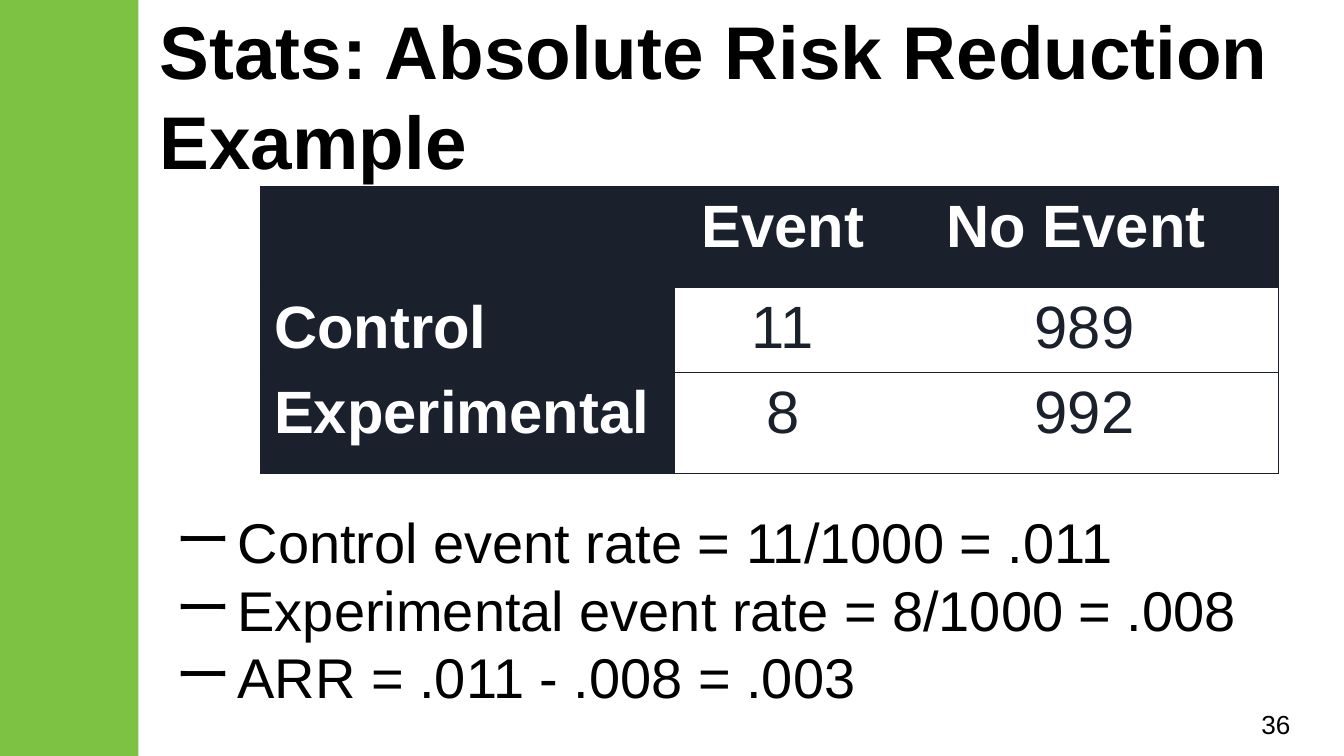
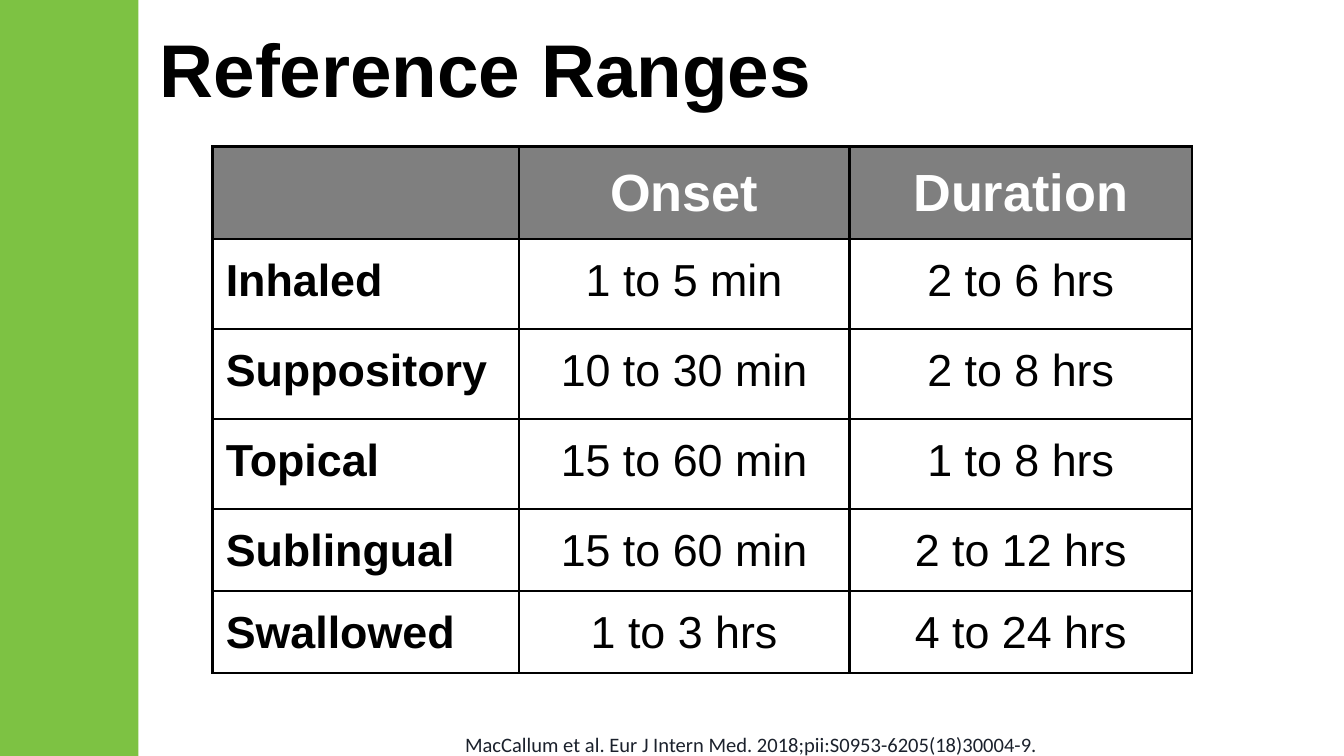
"""Build two slides with ruled tables beside a green side band."""
from dataclasses import dataclass
from typing import NamedTuple

from lxml import etree
from pptx import Presentation, util as u
from pptx.dml.color import RGBColor
from pptx.enum import shapes, text as t
from pptx.oxml import ns


@dataclass(frozen=True)
class Theme:
    """Colours, fonts and type sizes shared by the slides."""
    green: str = "7DC243"
    black: str = "000000"
    white: str = "FFFFFF"
    navy: str = "1B212C"
    rule: str = "1A202B"
    gray: str = "7F7F7F"
    font: str = "Arial"
    cite: str = "Calibri"
    title: int = 40
    body: int = 30
    page: int = 14
    note: int = 11
    loose: float = 1.15


class Box(NamedTuple):
    """A place in grid columns and rows."""
    col: float
    row: float
    wide: float
    tall: float


class Style(NamedTuple):
    """The look of one table."""
    head: str
    side: str | None
    label: str
    ink: str
    rule: str
    width: float
    inner: bool
    top: int
    size: int
    pad: float
    lead: float | None


class Grid(NamedTuple):
    """A table with its place, measures and words."""
    box: Box
    cols: list[float]
    rows: list[float]
    words: list[list[str]]
    style: Style


LOOK = Theme()
COLS, ROWS = 100, 56.25
WIDE = u.Inches(10)
UNIT = WIDE / COLS
TALL = round(ROWS * UNIT)

RISK = Grid(
    Box(19.4, 13.9, 75.7, 21.3), [30.8, 16.1, 28.8], [7.5, 4.1, 7.5],
    [["", "Event", "No Event "],
     ["Control", "11", "989"],
     ["Experimental", "8", "992"]],
    Style(LOOK.navy, LOOK.navy, LOOK.white, LOOK.navy, LOOK.rule,
          0.75, False, 32, 32, 0.5, None))

RANGES = Grid(
    Box(15.8, 10.9, 72.9, 39.1), [22.8, 24.6, 25.5],
    [6.9] + [6.7] * 3 + [6.1] * 2,
    [["", "Onset", "Duration"],
     ["Inhaled", "1 to 5 min", "2 to 6 hrs"],
     ["Suppository", "10 to 30 min", "2 to 8 hrs"],
     ["Topical", "15 to 60 min", "1 to 8 hrs"],
     ["Sublingual", "15 to 60 min", "2 to 12 hrs"],
     ["Swallowed", "1 to 3 hrs", "4 to 24 hrs"]],
    Style(LOOK.gray, None, LOOK.black, LOOK.black, LOOK.black,
          1.5, True, 28, 24, 0.7, LOOK.loose))

RATES = ["Control event rate = 11/1000 = .011",
         "Experimental event rate = 8/1000 = .008",
         "ARR = .011 - .008 = .003"]


def span(cells: float) -> int:
    """Turn grid cells into a length."""
    return round(cells * UNIT)


def place(box: Box) -> list[int]:
    """Turn a box into lengths."""
    return [span(side) for side in box]


def add(root, tag: str, **attrs: str):
    """Append a drawing element with its attributes."""
    return etree.SubElement(root, ns.qn(tag), attrs)


def mark(par) -> None:
    """Give a paragraph a hanging dash."""
    props = par._p.get_or_add_pPr()
    props.set("marL", str(span(5)))
    props.set("indent", str(-span(4.6)))
    add(add(props, "a:buClr"), "a:srgbClr", val=LOOK.black)
    add(props, "a:buFont", typeface=LOOK.font)
    add(props, "a:buChar", char="ー")


def write(par, words: str, *, size: int, color: str = LOOK.black,
          bold: bool = False, font: str = LOOK.font, align=None,
          lead: float | None = None, dash: bool = False) -> None:
    """Write formatted text into a paragraph."""
    if dash:
        mark(par)
    par.alignment = align
    par.line_spacing = lead
    par.font.size = u.Pt(size)
    if words:
        par.text = words
    for run in par.runs:
        run.font.name = font
        run.font.size = u.Pt(size)
        run.font.bold = bold
        run.font.color.rgb = RGBColor.from_string(color)


def label(slide, box: Box, lines: list[str], *, pad: tuple[float, float],
          anchor=t.MSO_ANCHOR.TOP, **form) -> None:
    """Draw a text box with one paragraph a line."""
    frame = slide.shapes.add_textbox(*place(box)).text_frame
    frame.word_wrap = True
    frame.vertical_anchor = anchor
    frame.margin_left = frame.margin_right = span(pad[0])
    frame.margin_top = frame.margin_bottom = span(pad[1])
    for num, line in enumerate(lines):
        par = frame.add_paragraph() if num else frame.paragraphs[0]
        write(par, line, **form)


def edge(cell, side: str, style: Style, seen: bool) -> None:
    """Rule or clear one side of a cell."""
    line = add(cell._tc.get_or_add_tcPr(), f"a:ln{side}",
               w=str(u.Pt(style.width)))
    if seen:
        add(add(line, "a:solidFill"), "a:srgbClr", val=style.rule)
    else:
        add(line, "a:noFill")


def fill(cell, color: str | None) -> None:
    """Fill a cell or leave it clear."""
    if color:
        cell.fill.solid()
        cell.fill.fore_color.rgb = RGBColor.from_string(color)
    else:
        cell.fill.background()


def chart(slide, grid: Grid) -> None:
    """Draw a ruled table."""
    style, last = grid.style, len(grid.cols) - 1
    frame = slide.shapes.add_table(
        len(grid.rows), len(grid.cols), *place(grid.box))
    table = frame.table
    table.horz_banding = table.first_row = False
    for col, wide in zip(table.columns, grid.cols):
        col.width = span(wide)
    for row, tall in zip(table.rows, grid.rows):
        row.height = span(tall)
    frame.height = span(grid.box.tall)
    for y, line in enumerate(grid.words):
        for x, words in enumerate(line):
            cell = table.cell(y, x)
            head, side = y == 0, x == 0
            cell.margin_left = cell.margin_right = span(1)
            cell.margin_top = cell.margin_bottom = span(style.pad)
            edge(cell, "L", style, style.inner or side)
            edge(cell, "R", style, style.inner or x == last)
            edge(cell, "T", style, True)
            edge(cell, "B", style, True)
            fill(cell, style.head if head else style.side if side else None)
            write(cell.text_frame.paragraphs[0], words,
                  size=style.top if head else style.size,
                  color=(LOOK.white if head else
                         style.label if side else style.ink),
                  bold=head or side, lead=style.lead,
                  align=None if side else t.PP_ALIGN.CENTER)


def start(deck, title: str, tall: float):
    """Add a slide with its side band and title."""
    slide = deck.slides.add_slide(deck.slide_layouts[6])
    band = slide.shapes.add_shape(shapes.MSO_SHAPE.RECTANGLE,
                                  *place(Box(0, 0, 10.3, ROWS)))
    band.shadow.inherit = False
    band.fill.solid()
    band.fill.fore_color.rgb = RGBColor.from_string(LOOK.green)
    band.line.fill.background()
    label(slide, Box(10.9, 1.9, 85.2, tall), [title], pad=(1, 1),
          anchor=t.MSO_ANCHOR.MIDDLE, size=LOOK.title, bold=True)
    return slide


def main() -> None:
    """Build and save the deck."""
    deck = Presentation()
    deck.slide_width, deck.slide_height = WIDE, TALL

    risk = start(deck, "Stats: Absolute Risk Reduction\vExample", 10.3)
    label(risk, Box(87.4, 52.7, 9.6, 2.4), ["36"], pad=(1, 0.5),
          anchor=t.MSO_ANCHOR.MIDDLE, size=LOOK.page,
          align=t.PP_ALIGN.RIGHT)
    label(risk, Box(11.7, 36.8, 83.9, 17.1), RATES, pad=(1, 1),
          size=LOOK.body, dash=True)
    chart(risk, RISK)

    ranges = start(deck, "Reference Ranges", 6.3)
    chart(ranges, RANGES)
    label(ranges, Box(34, 53.6, 46.1, 2.65),
          ["MacCallum et al. Eur J Intern Med. "
           "2018;pii:S0953-6205(18)30004-9."],
          pad=(0.6, 0.6), size=LOOK.note, color=LOOK.navy,
          font=LOOK.cite, lead=LOOK.loose)
    deck.save("out.pptx")


if __name__ == "__main__":
    main()
